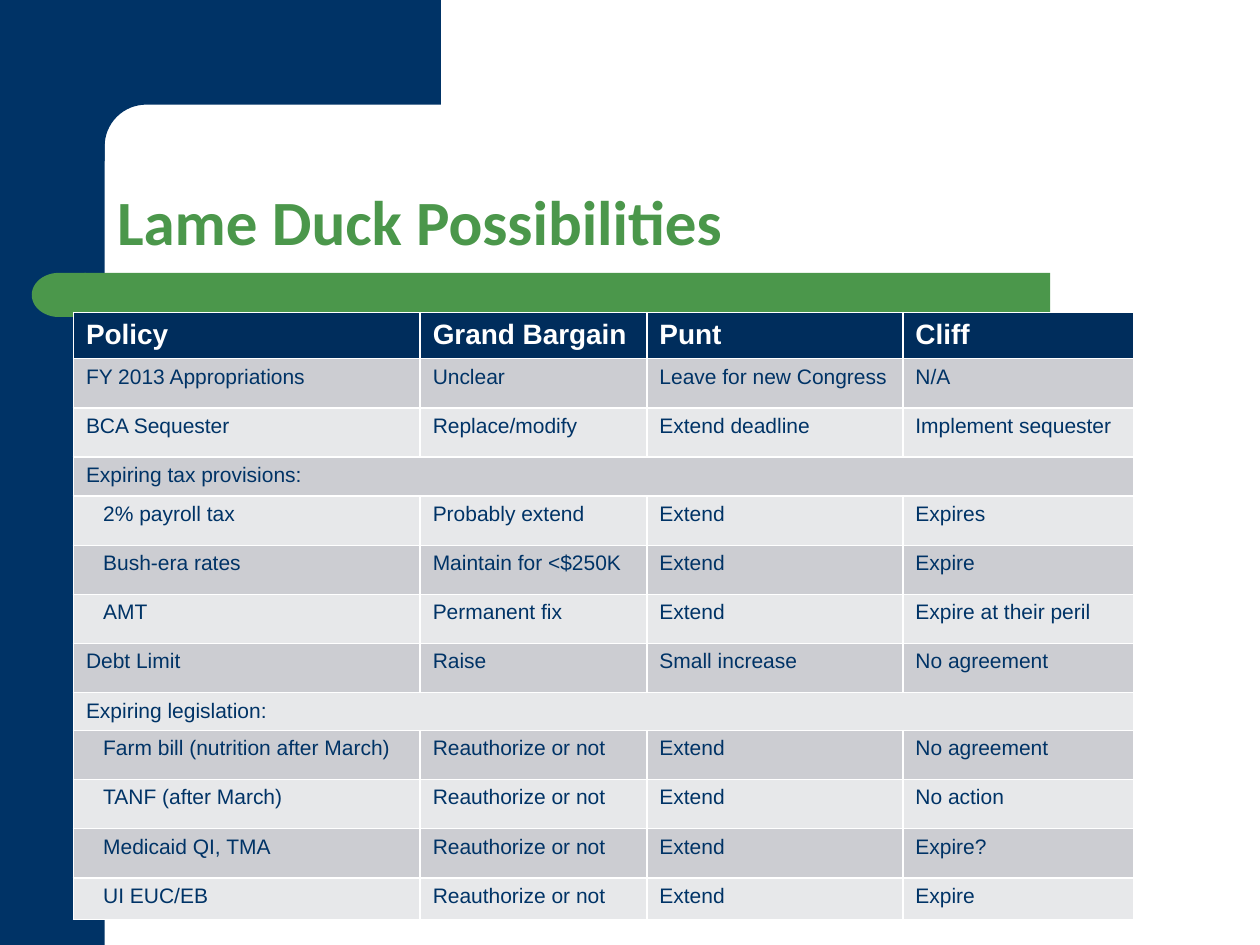
from math import cos, pi, sin

from pptx import Presentation
from pptx.dml.color import RGBColor
from pptx.enum.shapes import MSO_SHAPE as Preset
from pptx.enum.text import MSO_ANCHOR as Anchor
from pptx.util import Cm, Pt

COLORS = {
    "navy": "003366",
    "green": "4B974B",
    "header": "002D5C",
    "odd": "CCCDD2",
    "even": "E7E8EA",
    "white": "FFFFFF",
}
TITLE_FONT = {"name": "Calibri", "size": Pt(36), "bold": True}
HEADER_FONT = {"name": "Arial", "size": Pt(16), "bold": True}
BODY_FONT = {"name": "Arial", "size": Pt(12), "bold": False}


def write(frame, text, font_format, color):
    paragraph = frame.paragraphs[0]
    run = paragraph.add_run()
    run.text = text
    for name, value in font_format.items():
        setattr(run.font, name, value)
    run.font.color.rgb = RGBColor.from_string(COLORS[color])
    return paragraph


def paint(shape, color):
    """Give the shape a plain fill with no outline or shadow."""
    shape.fill.solid()
    shape.fill.fore_color.rgb = RGBColor.from_string(COLORS[color])
    shape.line.fill.background()
    shape.shadow.inherit = False


presentation = Presentation()
presentation.slide_width = Cm(25.4)
presentation.slide_height = Cm(19.05)
slide = presentation.slides.add_slide(presentation.slide_layouts[6])
shapes = slide.shapes

# Navy side band, and the top block with its hollow rounded corner
side_band = shapes.add_shape(Preset.RECTANGLE, 0, 0, Cm(2.11), Cm(19.05))
paint(side_band, "navy")

center, radius, steps = 2.95, 0.84, 16
angles = [pi / 2 * step / steps for step in range(steps + 1)]
corner = [(center - radius * sin(a), center - radius * cos(a)) for a in angles]
outline = [(8.89, 2.11), *corner, (2.11, 3.25), (1.27, 3.25), (1.27, 0)]
builder = shapes.build_freeform(Cm(8.89), 0, scale=1.0)
builder.add_line_segments([(Cm(x), Cm(y)) for x, y in outline], close=True)
paint(builder.convert_to_shape(), "navy")

# Green bar with a rounded left end
bar = shapes.add_shape(Preset.ROUNDED_RECTANGLE, Cm(1.7), Cm(5.5), Cm(19.47), Cm(0.89))
bar.adjustments[0] = 0
paint(bar, "green")
bar_end = shapes.add_shape(Preset.FLOWCHART_DELAY, Cm(0.64), Cm(5.5), Cm(1.09), Cm(0.89))
bar_end.rotation = 180
paint(bar_end, "green")

# Title
title = shapes.add_textbox(Cm(2.11), Cm(2.11), Cm(22.02), Cm(3.18))
frame_format = {"word_wrap": True, "vertical_anchor": Anchor.BOTTOM, "margin_bottom": Cm(0.07)}
for name, value in frame_format.items():
    setattr(title.text_frame, name, value)
write(title.text_frame, "Lame Duck Possibilities", TITLE_FONT, "green").line_spacing = 0.9

# Policy table: row height in cm, indented or not, texts.
# A row with one text spans all the columns.
rows = [
    (0.89, False, ["Policy", "Grand Bargain", "Punt", "Cliff"]),
    (0.99, False, ["FY 2013 Appropriations", "Unclear", "Leave for new Congress", "N/A"]),
    (0.99, False, ["BCA Sequester", "Replace/modify", "Extend deadline", "Implement sequester"]),
    (0.79, False, ["Expiring tax provisions:"]),
    (0.99, True, ["2% payroll tax", "Probably extend", "Extend", "Expires"]),
    (0.99, True, ["Bush-era rates", "Maintain for <$250K", "Extend", "Expire"]),
    (0.99, True, ["AMT", "Permanent fix", "Extend", "Expire at their peril"]),
    (0.99, False, ["Debt Limit", "Raise", "Small increase", "No agreement"]),
    (0.74, False, ["Expiring legislation:"]),
    (0.99, True, ["Farm bill (nutrition after March)", "Reauthorize or not", "Extend", "No agreement"]),
    (0.99, True, ["TANF (after March)", "Reauthorize or not", "Extend", "No action"]),
    (0.99, True, ["Medicaid QI, TMA", "Reauthorize or not", "Extend", "Expire?"]),
    (0.84, True, ["UI EUC/EB", "Reauthorize or not", "Extend", "Expire"]),
]
column_widths = [6.99, 4.57, 5.16, 4.65]
table_height = sum(height for height, _, _ in rows)
table = shapes.add_table(
    len(rows), len(column_widths), Cm(1.48), Cm(6.3), Cm(sum(column_widths)), Cm(table_height)
).table
for column, width in zip(table.columns, column_widths):
    column.width = Cm(width)

for index, (height, indented, texts) in enumerate(rows):
    row = table.rows[index]
    row.height = Cm(height)
    if index == 0:
        fill, font_format, color = "header", HEADER_FONT, "white"
    else:
        fill, font_format, color = ("odd" if index % 2 else "even"), BODY_FONT, "navy"
    for cell in row.cells:
        cell.fill.solid()
        cell.fill.fore_color.rgb = RGBColor.from_string(COLORS[fill])
    if len(texts) == 1:
        row.cells[0].merge(row.cells[len(column_widths) - 1])
    if indented:
        row.cells[0].margin_left = Cm(0.6)
    for cell, text in zip(row.cells, texts):
        write(cell.text_frame, text, font_format, color)

presentation.save("out.pptx")
